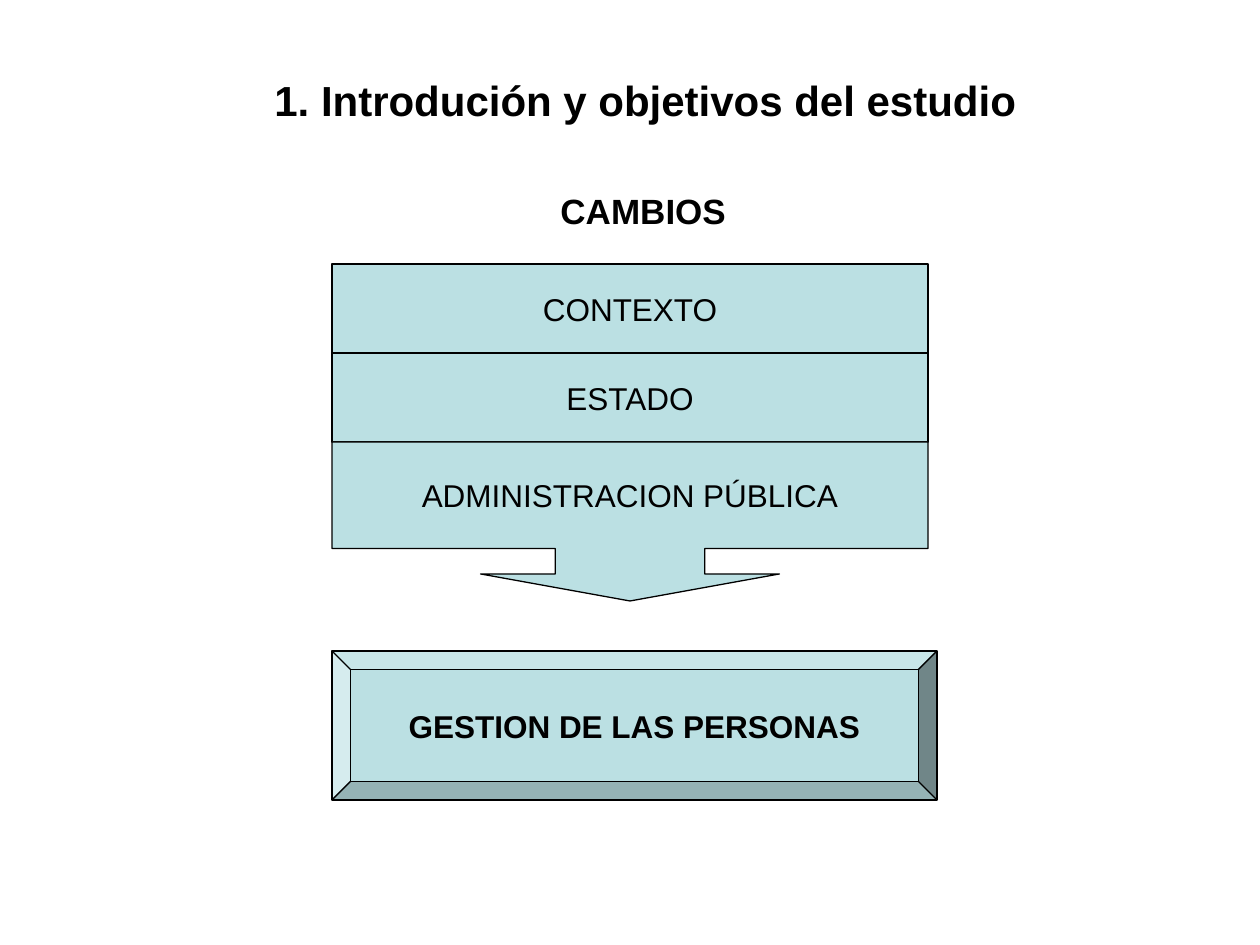
from dataclasses import dataclass

from pptx import Presentation
from pptx.dml.color import RGBColor
from pptx.enum.shapes import MSO_SHAPE as Shape
from pptx.enum.text import MSO_ANCHOR as Anchor, MSO_AUTO_SIZE as AutoSize, PP_ALIGN as Align
from pptx.util import Pt

PX = 914400 / 126


@dataclass(frozen=True)
class Theme:
    font: str = "Arial"
    ink: RGBColor = RGBColor(0, 0, 0)
    panel: RGBColor = RGBColor(0xBB, 0xE0, 0xE3)
    line: float = 0.75
    title: int = 24
    heading: int = 20
    label: int = 18


theme = Theme()


def px(*lengths):
    """Turn pixel lengths into EMU."""
    return [round(length * PX) for length in lengths]


def write(box, text, size, bold, align, wrap):
    frame = box.text_frame
    frame.word_wrap = wrap
    para = frame.paragraphs[0]
    para.text = text
    para.alignment = align
    font = para.runs[0].font
    font.name = theme.font
    font.size = Pt(size)
    font.bold = bold
    font.color.rgb = theme.ink


deck = Presentation()
deck.slide_width, deck.slide_height = px(1260, 945)
page = deck.slides.add_slide(deck.slide_layouts[6])

# Stacked levels of change, leading down to people management
left, top, width, row = 332, 264, 596, 89
panels = [
    ("CONTEXTO", Shape.RECTANGLE, top, width, row, [], False),
    ("ESTADO", Shape.RECTANGLE, top + row, width, row, [], False),
    ("ADMINISTRACION PÚBLICA", Shape.DOWN_ARROW_CALLOUT, top + 2 * row, width, 159,
     [0.94, 0.94, 0.17, 0.67], False),
    ("GESTION DE LAS PERSONAS", Shape.BEVEL, 651, 605, 149, [0.125], True),
]
for text, kind, y, panel_width, height, adjustments, bold in panels:
    panel = page.shapes.add_shape(kind, *px(left, y, panel_width, height))
    panel.shadow.inherit = False
    for index, value in enumerate(adjustments):
        panel.adjustments[index] = value
    panel.fill.solid()
    panel.fill.fore_color.rgb = theme.panel
    panel.line.color.rgb = theme.ink
    panel.line.width = Pt(theme.line)
    panel.text_frame.vertical_anchor = Anchor.MIDDLE
    write(panel, text, theme.label, bold, Align.CENTER, False)

headings = [
    ("CAMBIOS", (548, 183, 194, 54), theme.heading, False),
    ("1. Introdución y objetivos del estudio", (262, 68, 882, 63), theme.title, True),
]
for text, place, size, wrap in headings:
    box = page.shapes.add_textbox(*px(*place))
    write(box, text, size, True, Align.LEFT, wrap)
    box.text_frame.auto_size = AutoSize.SHAPE_TO_FIT_TEXT

deck.save("out.pptx")
